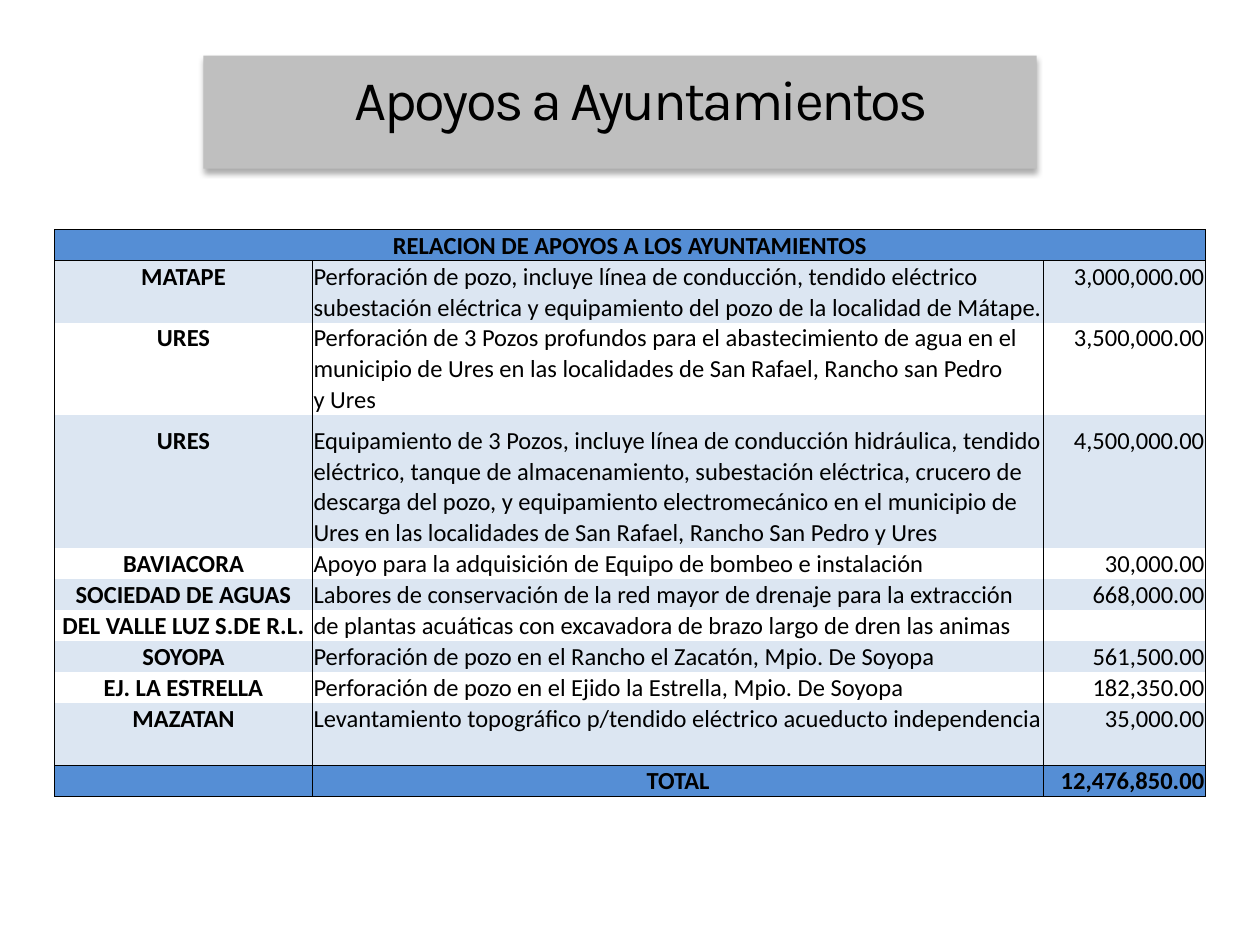
from pptx import Presentation
from pptx.dml.color import RGBColor as RGB
from pptx.enum.shapes import MSO_SHAPE as Shape
from pptx.enum.text import MSO_ANCHOR as Anchor, PP_ALIGN as Align
from pptx.oxml import parse_xml
from pptx.oxml.ns import nsdecls
from pptx.util import Cm, Pt

# Content: (beneficiary, description lines, amount)
TITLE = "Apoyos a Ayuntamientos"
HEADER = "RELACION DE APOYOS A LOS AYUNTAMIENTOS"
SUPPORTS = [
    ("MATAPE", ["Perforación de pozo, incluye línea de conducción, tendido eléctrico",
                "subestación eléctrica y equipamiento del pozo de la localidad de Mátape."],
     "3,000,000.00"),
    ("URES", ["Perforación de 3 Pozos profundos para el abastecimiento de agua en el",
              "municipio de Ures en las localidades de San Rafael, Rancho san Pedro",
              "y Ures"], "3,500,000.00"),
    ("URES", ["Equipamiento de 3 Pozos, incluye línea de conducción hidráulica, tendido",
              "eléctrico, tanque de almacenamiento, subestación eléctrica, crucero de",
              "descarga del pozo, y equipamiento electromecánico en el municipio de",
              "Ures en las localidades de San Rafael, Rancho San Pedro y Ures"],
     "4,500,000.00"),
    ("BAVIACORA", ["Apoyo para la adquisición de Equipo de bombeo e instalación"], "30,000.00"),
    ("SOCIEDAD DE AGUAS",
     ["Labores de conservación de la red mayor de drenaje para la extracción"], "668,000.00"),
    ("DEL VALLE LUZ S.DE R.L.",
     ["de plantas acuáticas con excavadora de brazo largo de dren las animas"], ""),
    ("SOYOPA", ["Perforación de pozo en el Rancho el Zacatón, Mpio. De Soyopa"], "561,500.00"),
    ("EJ. LA ESTRELLA", ["Perforación de pozo en el Ejido la Estrella, Mpio. De Soyopa"],
     "182,350.00"),
    ("MAZATAN", ["Levantamiento topográfico p/tendido eléctrico acueducto independencia", ""],
     "35,000.00"),
]
TOTAL = ("", "TOTAL", "12,476,850.00")

THEME = {
    "title_font": "Karla", "title_size": Pt(32), "title_leading": Pt(23),
    "body_font": "Calibri", "body_size": Pt(14),
    "text": RGB(0, 0, 0), "banner": RGB.from_string("BFBFBF"),
    "accent": RGB.from_string("558ED5"), "band": RGB.from_string("DCE6F2"),
}
COL_WIDTHS = [Cm(5.2), Cm(14.74), Cm(3.26)]
ROW_H, TALL_ROW_H, TALL_ROW = Cm(10.62) // 17, Cm(0.81), 6
ALIGNS = [Align.CENTER, Align.LEFT, Align.RIGHT]


def style(p, font, size, align, bold=False):
    p.alignment = align
    f = p.font
    f.name, f.size, f.bold = font, size, bold
    f.color.rgb = THEME["text"]


def set_borders(cell, sides):
    """Draw thin lines on the given sides (letters of LRTB) and clear the rest."""
    tcPr = cell._tc.get_or_add_tcPr()
    for i, side in enumerate("LRTB"):
        paint = '<a:solidFill><a:srgbClr val="000000"/></a:solidFill>' if side in sides else "<a:noFill/>"
        tcPr.insert(i, parse_xml(f'<a:ln{side} {nsdecls("a")} w="6350">{paint}</a:ln{side}>'))


def fill_cell(cell, text, align, bold, color, sides):
    cell.margin_left = cell.margin_right = cell.margin_top = Cm(0.02)
    cell.margin_bottom = 0
    cell.vertical_anchor = Anchor.BOTTOM
    if color is None:
        cell.fill.background()
    else:
        cell.fill.solid()
        cell.fill.fore_color.rgb = color
    set_borders(cell, sides)
    cell.text = text
    style(cell.text_frame.paragraphs[0], THEME["body_font"], THEME["body_size"], align, bold)


prs = Presentation()
prs.slide_width, prs.slide_height = Cm(25.4), Cm(19.05)
slide = prs.slides.add_slide(prs.slide_layouts[6])

# Title banner with soft shadow
sp = slide.shapes.add_shape(Shape.RECTANGLE, Cm(4.1), Cm(1.12), Cm(16.8), Cm(2.28))
sp.shadow.inherit = False
sp.fill.solid()
sp.fill.fore_color.rgb = THEME["banner"]
sp.line.fill.background()
sp._element.spPr.find(".//{*}effectLst").append(parse_xml(
    f'<a:outerShdw {nsdecls("a")} blurRad="44450" dist="27940" dir="5400000" rotWithShape="0">'
    '<a:srgbClr val="000000"><a:alpha val="32000"/></a:srgbClr></a:outerShdw>'))

# Title text
tf = slide.shapes.add_textbox(Cm(3.17), Cm(1.73), Cm(19.53), Cm(2.39)).text_frame
tf.word_wrap = True
p = tf.paragraphs[0]
r = p.add_run()
r.text = TITLE
style(p, THEME["title_font"], THEME["title_size"], Align.CENTER)
p.line_spacing = THEME["title_leading"]
r._r.get_or_add_rPr().set("spc", "-150")

# One table row per description line; shading alternates by support
rows = []
for n, (name, lines, amount) in enumerate(SUPPORTS):
    color = THEME["band"] if n % 2 == 0 else None
    for i, line in enumerate(lines):
        rows.append(((name, line, amount) if i == 0 else ("", line, ""), color))

# Table frame
n_rows = len(rows) + 2
table = slide.shapes.add_table(n_rows, 3, Cm(1.1), Cm(4.63), sum(COL_WIDTHS), ROW_H * n_rows).table
table.first_row = table.horz_banding = False
for col, width in zip(table.columns, COL_WIDTHS):
    col.width = width
for i, row in enumerate(table.rows):
    row.height = TALL_ROW_H if i == TALL_ROW else ROW_H

# Header
for c in range(3):
    fill_cell(table.cell(0, c), HEADER if c == 0 else "", Align.CENTER, True, THEME["accent"], "LRTB")
table.cell(0, 0).merge(table.cell(0, 2))

# Supports
for i, (texts, color) in enumerate(rows, start=1):
    sides = "LR" + ("T" if i == 1 else "") + ("B" if i == len(rows) else "")
    for c, text in enumerate(texts):
        fill_cell(table.cell(i, c), text, ALIGNS[c], c == 0, color, sides)

# Total
for c, text in enumerate(TOTAL):
    align = Align.RIGHT if c == 2 else Align.CENTER
    fill_cell(table.cell(n_rows - 1, c), text, align, True, THEME["accent"], "LRTB")

prs.save("out.pptx")
